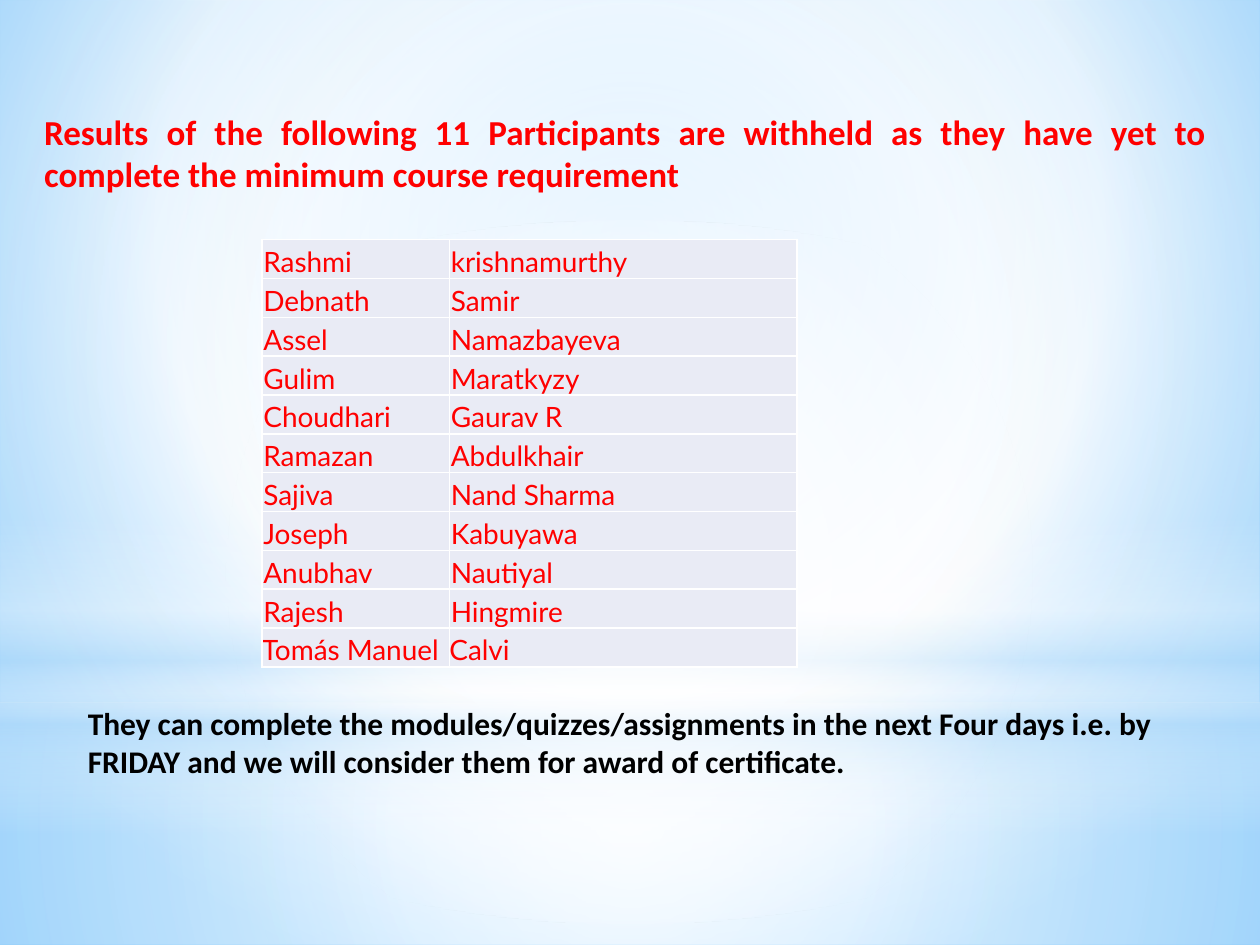
from pptx import Presentation
from pptx.dml.color import RGBColor
from pptx.enum.shapes import MSO_SHAPE
from pptx.enum.text import MSO_ANCHOR, PP_ALIGN
from pptx.oxml import parse_xml
from pptx.oxml.ns import nsdecls
from pptx.util import Cm, Pt


def style(p, text, font, size, color, bold=False):
    p.text = text
    p.font.name = font
    p.font.size = Pt(size)
    p.font.bold = bold
    p.font.color.rgb = RGBColor.from_string(color)


def gradient(el, stops, center=None):
    gs = "".join(
        f'<a:gs pos="{pos * 1000}"><a:srgbClr val="{color}">'
        f'<a:alpha val="{alpha * 1000}"/></a:srgbClr></a:gs>'
        for pos, color, alpha in stops
    )
    if center:
        l, t, r, b = (v * 1000 for v in center)
        shade = f'<a:path path="circle"><a:fillToRect l="{l}" t="{t}" r="{r}" b="{b}"/></a:path>'
    else:
        shade = '<a:lin ang="5400000" scaled="0"/>'
    solid = el.xpath(".//a:solidFill")[0]
    fill = parse_xml(
        f'<a:gradFill {nsdecls("a")} rotWithShape="1"><a:gsLst>{gs}</a:gsLst>{shade}</a:gradFill>'
    )
    solid.getparent().replace(solid, fill)


prs = Presentation()
prs.slide_width = Cm(25.4)
prs.slide_height = Cm(19.05)
s = prs.slides.add_slide(prs.slide_layouts[6])

WHITE, SKY, RED = "FFFFFF", "B4DCFA", "FF0000"
MIDDLE = (50, 50, 50, 50)

s.background.fill.solid()
s.background.fill.fore_color.rgb = RGBColor.from_string(WHITE)
gradient(s.element, [(0, "9ED5FF", 100), (60, WHITE, 100), (100, "5BB9FF", 100)], (20, 10, 20, 60))

glows = [
    (MSO_SHAPE.RECTANGLE, 14.17, 4.88, [(0, WHITE, 91), (37, WHITE, 76), (100, SKY, 79)], MIDDLE),
    (MSO_SHAPE.RECTANGLE, 0, 14.17, [(0, WHITE, 89), (48, WHITE, 62), (100, SKY, 79)], MIDDLE),
    (MSO_SHAPE.RECTANGLE, 10.46, 6.35,
     [(0, WHITE, 0), (29, WHITE, 30), (45, SKY, 40), (55, WHITE, 26), (65, SKY, 60), (100, WHITE, 0)], None),
    (MSO_SHAPE.OVAL, 4.45, 14.17, [(0, WHITE, 100), (56, WHITE, 0)], MIDDLE),
]
for kind, top, height, stops, center in glows:
    sp = s.shapes.add_shape(kind, 0, Cm(top), prs.slide_width, Cm(height))
    sp.shadow.inherit = False
    sp.line.fill.background()
    sp.fill.solid()
    sp.fill.fore_color.rgb = RGBColor.from_string(WHITE)
    gradient(sp.element, stops, center)

texts = [
    ((0.64, 2.11, 23.93, 1.96), MSO_ANCHOR.TOP, PP_ALIGN.JUSTIFY, 20, RED,
     "Results of the following 11 Participants are withheld as they have yet to "
     "complete the minimum course requirement"),
    ((1.52, 4.83, 22.66, 11.02), MSO_ANCHOR.BOTTOM, PP_ALIGN.LEFT, 18, "000000",
     "They can complete the modules/quizzes/assignments in the next Four days i.e. by "
     "FRIDAY and we will consider them for award of certificate."),
]
for box, anchor, align, size, color, text in texts:
    tf = s.shapes.add_textbox(*map(Cm, box)).text_frame
    tf.word_wrap = True
    tf.vertical_anchor = anchor
    p = tf.paragraphs[0]
    p.alignment = align
    style(p, text, "Calibri", size, color, True)

names = [
    ("Rashmi", "krishnamurthy"),
    ("Debnath", "Samir"),
    ("Assel", "Namazbayeva"),
    ("Gulim", "Maratkyzy"),
    ("Choudhari", "Gaurav R"),
    ("Ramazan", "Abdulkhair"),
    ("Sajiva", "Nand Sharma"),
    ("Joseph", "Kabuyawa"),
    ("Anubhav", "Nautiyal"),
    ("Rajesh", "Hingmire"),
    ("Tomás Manuel", "Calvi"),
]
table = s.shapes.add_table(len(names), 2, Cm(5.28), Cm(4.83), Cm(10.79), Cm(8.62)).table
table.columns[0].width = Cm(3.78)
table.columns[1].width = Cm(7.01)
for i, row in enumerate(names):
    inset = Cm(0.03) if i < len(names) - 1 else 0
    for j, name in enumerate(row):
        cell = table.cell(i, j)
        cell.margin_left = cell.margin_right = cell.margin_top = inset
        cell.margin_bottom = 0
        cell.vertical_anchor = MSO_ANCHOR.BOTTOM
        cell.fill.solid()
        cell.fill.fore_color.rgb = RGBColor.from_string("E9EBF5")
        style(cell.text_frame.paragraphs[0], name, "Lato", 16, RED)
        tcPr = cell._tc.get_or_add_tcPr()
        for k, side in enumerate("LRTB"):
            tcPr.insert(k, parse_xml(
                f'<a:ln{side} {nsdecls("a")} w="12700"><a:solidFill>'
                f'<a:srgbClr val="{WHITE}"/></a:solidFill></a:ln{side}>'
            ))

prs.save("out.pptx")
